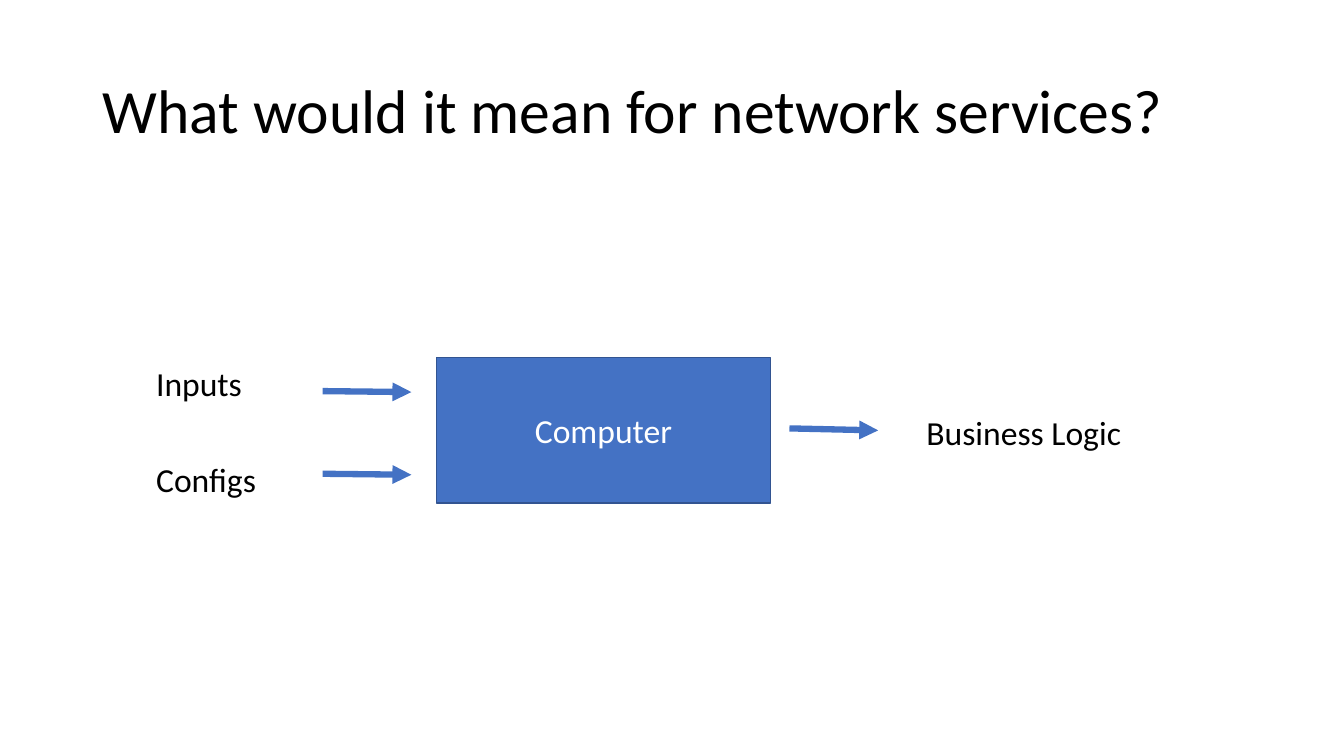
from dataclasses import dataclass

from lxml.etree import SubElement
from pptx import Presentation
from pptx.dml.color import RGBColor
from pptx.enum.shapes import MSO_CONNECTOR, MSO_SHAPE
from pptx.enum.text import MSO_ANCHOR, MSO_AUTO_SIZE, PP_ALIGN
from pptx.oxml.ns import qn
from pptx.slide import Slide
from pptx.text.text import TextFrame
from pptx.util import Inches, Pt


@dataclass(frozen=True)
class Theme:
    font: str = "Calibri"
    ink: RGBColor = RGBColor(0x00, 0x00, 0x00)
    paper: RGBColor = RGBColor(0xFF, 0xFF, 0xFF)
    accent: RGBColor = RGBColor(0x44, 0x72, 0xC4)
    outline: RGBColor = RGBColor(0x32, 0x54, 0x91)
    title_size: float = 44
    label_size: float = 24
    outline_width: float = 1
    arrow_width: float = 4.5


@dataclass(frozen=True)
class Label:
    text: str
    left: float
    top: float
    width: float
    height: float = 0.5


@dataclass(frozen=True)
class Arrow:
    left: float
    top: float
    length: float = 0.88
    drop: float = 0.01


THEME = Theme()
COMPUTER = Label("Computer", 4.33, 3.55, 3.31, 1.44)
LABELS = (
    Label("Configs", 1.45, 4.5, 1.43),
    Label("Inputs", 1.45, 3.55, 1.16),
    Label("Business Logic", 9.09, 4.04, 2.16),
)
ARROWS = (Arrow(3.2, 3.88), Arrow(3.2, 4.7), Arrow(7.83, 4.25, drop=0.02))


def write(frame: TextFrame, text: str, size: float, color: RGBColor,
          align: PP_ALIGN = PP_ALIGN.LEFT) -> None:
    paragraph = frame.paragraphs[0]
    paragraph.alignment = align
    run = paragraph.add_run()
    run.text = text
    run.font.name = THEME.font
    run.font.size = Pt(size)
    run.font.color.rgb = color


def add_title(slide: Slide, text: str) -> None:
    title = slide.shapes.title
    title.left, title.top = Inches(0.92), Inches(0.4)
    title.width, title.height = Inches(11.5), Inches(1.45)
    frame = title.text_frame
    frame.word_wrap = True
    frame.auto_size = MSO_AUTO_SIZE.NONE
    frame.vertical_anchor = MSO_ANCHOR.MIDDLE
    write(frame, text, THEME.title_size, THEME.ink)
    frame.paragraphs[0].line_spacing = 0.9


def add_box(slide: Slide, box: Label) -> None:
    shape = slide.shapes.add_shape(
        MSO_SHAPE.RECTANGLE, Inches(box.left), Inches(box.top),
        Inches(box.width), Inches(box.height))
    shape.shadow.inherit = False
    shape.fill.solid()
    shape.fill.fore_color.rgb = THEME.accent
    shape.line.color.rgb = THEME.outline
    shape.line.width = Pt(THEME.outline_width)
    shape.text_frame.vertical_anchor = MSO_ANCHOR.MIDDLE
    write(shape.text_frame, box.text, THEME.label_size, THEME.paper, PP_ALIGN.CENTER)


def add_arrow(slide: Slide, arrow: Arrow) -> None:
    connector = slide.shapes.add_connector(
        MSO_CONNECTOR.STRAIGHT, Inches(arrow.left), Inches(arrow.top),
        Inches(arrow.left + arrow.length), Inches(arrow.top + arrow.drop))
    connector.line.color.rgb = THEME.accent
    connector.line.width = Pt(THEME.arrow_width)
    SubElement(connector.line._get_or_add_ln(), qn("a:tailEnd"), type="triangle")
    SubElement(connector._element.spPr, qn("a:effectLst"))


def add_label(slide: Slide, label: Label) -> None:
    box = slide.shapes.add_textbox(
        Inches(label.left), Inches(label.top),
        Inches(label.width), Inches(label.height))
    box.text_frame.word_wrap = True
    box.text_frame.auto_size = MSO_AUTO_SIZE.SHAPE_TO_FIT_TEXT
    write(box.text_frame, label.text, THEME.label_size, THEME.ink)


def main() -> None:
    presentation = Presentation()
    presentation.slide_width = Inches(13.33)
    presentation.slide_height = Inches(7.5)
    title_only = presentation.slide_layouts.get_by_name("Title Only")
    slide = presentation.slides.add_slide(title_only)
    add_title(slide, "What would it mean for network services?")
    add_box(slide, COMPUTER)
    for arrow in ARROWS:
        add_arrow(slide, arrow)
    for label in LABELS:
        add_label(slide, label)
    presentation.save("out.pptx")


if __name__ == "__main__":
    main()
